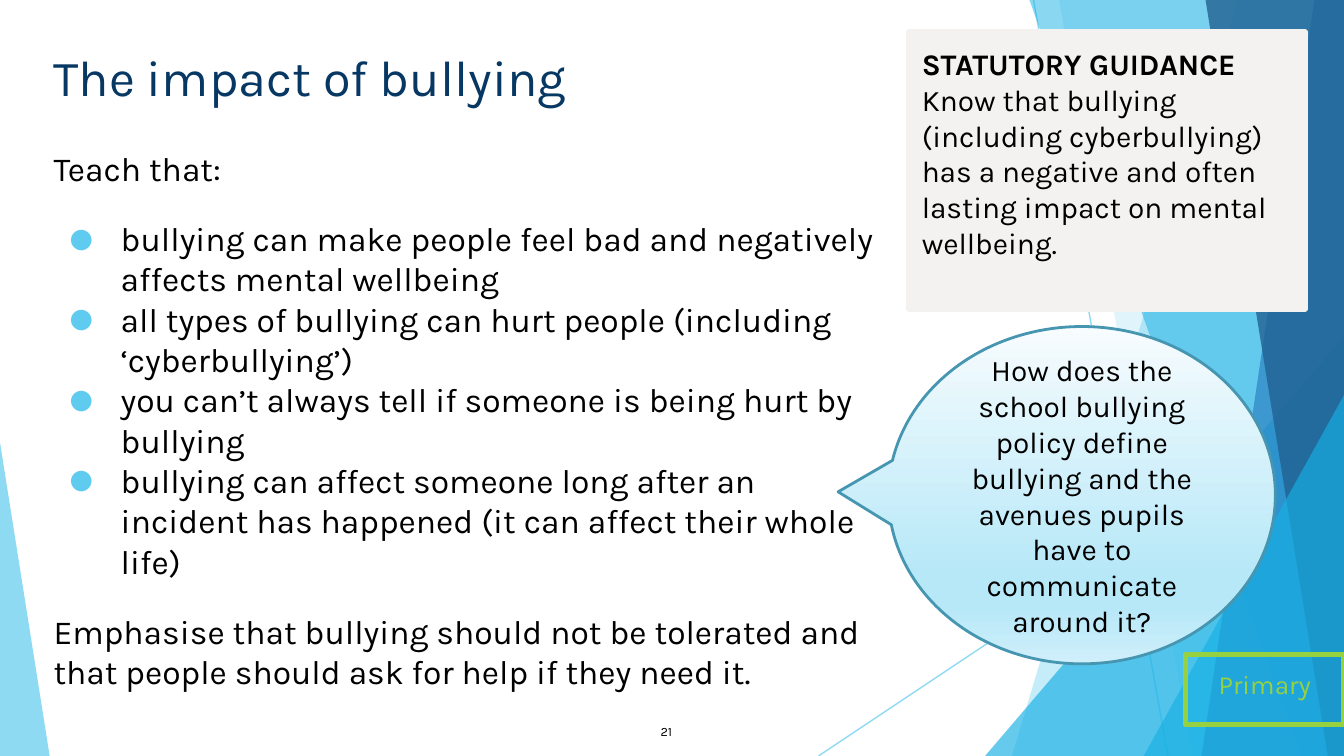
from dataclasses import dataclass

from lxml.etree import SubElement
from pptx import Presentation
from pptx.dml.color import RGBColor
from pptx.enum.shapes import MSO_CONNECTOR as Connector, MSO_SHAPE as Preset
from pptx.enum.text import MSO_ANCHOR as Anchor, PP_ALIGN as Align
from pptx.oxml.ns import qn
from pptx.util import Inches, Pt

WIDTH = 10
HEIGHT = WIDTH * 9 / 16
FONT = "Karla"
BLACK, NAVY, SKY, BLUE = "000000", "073763", "5FCBEF", "17B0E4"
GREEN, GREY = "96D141", "F3F2F1"


@dataclass
class Ray:
    start: tuple[float, float]
    end: tuple[float, float]


@dataclass
class Band:
    """Area from a slanted left edge to the right edge of the slide."""
    top_x: float
    bottom_x: float
    color: str
    alpha: int


@dataclass
class Wedge:
    """Right-angled triangle standing on the bottom of the slide."""
    left: float
    top: float
    width: float
    apex: int
    color: str
    alpha: int


@dataclass
class Line:
    text: str
    bullet: bool = False
    space_before: int = 0


DECORATION = [
    Ray((7.69, 0), (8.69, HEIGHT)),
    Ray((10, 3.02), (6.09, HEIGHT)),
    Band(9.21, 7.53, SKY, 36),
    Band(7.88, 8.87, SKY, 20),
    Wedge(7.33, 2.5, 2.67, 1, BLUE, 66),
    Band(7.66, 9.68, BLUE, 50),
    Band(9.78, 8.94, "2E83C3", 70),
    Band(8.97, 9.88, "226292", 80),
    Wedge(8.51, 2.94, 1.49, 1, BLUE, 66),
    Wedge(0, 3.29, 0.37, 0, SKY, 70),
]

BODY = [
    Line("Teach that:"),
    Line("bullying can make people feel bad and negatively affects mental wellbeing", True, 16),
    Line("all types of bullying can hurt people (including ‘cyberbullying’)", True),
    Line("you can’t always tell if someone is being hurt by bullying", True),
    Line("bullying can affect someone long after an incident has happened "
         "(it can affect their whole life)", True),
    Line("Emphasise that bullying should not be tolerated and that people "
         "should ask for help if they need it.", space_before=16),
]


def rgb(color: str) -> RGBColor:
    return RGBColor.from_string(color)


def set_fill(fill, color: str, alpha: int = 100) -> None:
    fill.solid()
    fill.fore_color.rgb = rgb(color)
    if alpha < 100:
        color_element = fill._xPr.find(".//" + qn("a:srgbClr"))
        SubElement(color_element, qn("a:alpha"), val=str(alpha * 1000))


def draw_ray(shapes, ray: Ray) -> None:
    points = [Inches(value) for value in ray.start + ray.end]
    connector = shapes.add_connector(Connector.STRAIGHT, *points)
    connector.line.width = Pt(0.75)
    set_fill(connector.line.fill, SKY, 70)
    SubElement(connector._element.spPr, qn("a:effectLst"))


def draw_band(shapes, band: Band) -> None:
    corners = [(WIDTH, 0), (WIDTH, HEIGHT), (band.bottom_x, HEIGHT)]
    builder = shapes.build_freeform(Inches(band.top_x), 0)
    builder.add_line_segments([(Inches(x), Inches(y)) for x, y in corners])
    finish(builder.convert_to_shape(), band.color, band.alpha)


def draw_wedge(shapes, wedge: Wedge) -> None:
    shape = add_preset(shapes, Preset.ISOSCELES_TRIANGLE, wedge.left, wedge.top,
                       wedge.width, HEIGHT - wedge.top)
    shape.adjustments[0] = wedge.apex
    finish(shape, wedge.color, wedge.alpha)


def finish(shape, color: str, alpha: int) -> None:
    shape.shadow.inherit = False
    set_fill(shape.fill, color, alpha)
    shape.line.fill.background()


def add_preset(shapes, preset, left: float, top: float, width: float, height: float):
    shape = shapes.add_shape(preset, Inches(left), Inches(top), Inches(width), Inches(height))
    shape.shadow.inherit = False
    return shape


def add_box(shapes, left: float, top: float, width: float, height: float):
    return shapes.add_textbox(Inches(left), Inches(top), Inches(width), Inches(height))


def set_outline(shape, color: str, width: float) -> None:
    shape.line.color.rgb = rgb(color)
    shape.line.width = Pt(width)


def set_text(shape, text: str, size: float, color: str = BLACK, align=Align.LEFT,
             anchor=Anchor.TOP, inset: float = 0.1) -> None:
    frame = shape.text_frame
    frame.text = text
    frame.word_wrap = True
    frame.vertical_anchor = anchor
    frame.margin_left = frame.margin_right = Inches(0.1)
    frame.margin_top = frame.margin_bottom = Inches(inset)
    for paragraph in frame.paragraphs:
        paragraph.alignment = align
        for run in paragraph.runs:
            format_run(run, size, color)


def format_run(run, size: float, color: str = BLACK, bold: bool = False) -> None:
    run.font.name, run.font.size, run.font.bold = FONT, Pt(size), bold
    run.font.color.rgb = rgb(color)


def add_bullet(paragraph) -> None:
    properties = paragraph._p.get_or_add_pPr()
    properties.set("marL", str(Inches(0.5)))
    properties.set("indent", str(Inches(-0.38)))
    bullet_color = SubElement(properties, qn("a:buClr"))
    SubElement(bullet_color, qn("a:srgbClr"), val=SKY)
    SubElement(properties, qn("a:buSzPct"), val="80000")
    SubElement(properties, qn("a:buFont"), typeface=FONT)
    SubElement(properties, qn("a:buChar"), char="●")


def set_gradient(shape, stops: list[tuple[int, str]]) -> None:
    shape.fill.gradient()
    shape.fill.gradient_angle = 270
    stop_list = shape._element.spPr.find(".//" + qn("a:gsLst"))
    stop_list.clear()
    for position, color in stops:
        stop = SubElement(stop_list, qn("a:gs"), pos=str(position * 1000))
        SubElement(stop, qn("a:srgbClr"), val=color)


def main() -> None:
    presentation = Presentation()
    presentation.slide_width, presentation.slide_height = Inches(WIDTH), Inches(HEIGHT)
    shapes = presentation.slides.add_slide(presentation.slide_layouts[6]).shapes

    # Background facets
    painters = {Ray: draw_ray, Band: draw_band, Wedge: draw_wedge}
    for item in DECORATION:
        painters[type(item)](shapes, item)

    # Title and teaching points
    set_text(add_box(shapes, 0.3, 0.24, 6.6, 0.63), "The impact of bullying", 27, NAVY)
    body = add_box(shapes, 0.3, 1, 6.32, 4.12)
    set_text(body, "\n".join(line.text for line in BODY), 18)
    for paragraph, line in zip(body.text_frame.paragraphs, BODY):
        paragraph.space_before = Pt(line.space_before)
        if line.bullet:
            add_bullet(paragraph)

    # Statutory guidance
    guidance = add_preset(shapes, Preset.RECTANGLE, 6.76, 0.24, 2.95, 2.06)
    set_fill(guidance.fill, GREY)
    set_outline(guidance, GREY, 3)
    set_text(guidance, "STATUTORY GUIDANCE ", 16)
    paragraph = guidance.text_frame.paragraphs[0]
    paragraph.runs[0].font.bold = True
    run = paragraph.add_run()
    run.text = ("Know that bullying (including cyberbullying) has a negative "
                "and often lasting impact on mental wellbeing.")
    format_run(run, 16)

    # Slide number and school phase
    set_text(add_box(shapes, 4.59, 5.26, 0.51, 0.37), "21", 6.8,
             align=Align.RIGHT, anchor=Anchor.MIDDLE)
    phase = add_preset(shapes, Preset.RECTANGLE, 8.82, 4.87, 1.18, 0.52)
    phase.fill.background()
    set_outline(phase, GREEN, 3)
    set_text(phase, "Primary", 14, GREEN, Align.CENTER)

    # Question callout
    callout = add_preset(shapes, Preset.OVAL_CALLOUT, 6.61, 2.43, 2.88, 2.51)
    callout.adjustments[0], callout.adjustments[1] = -0.63, -0.01
    set_gradient(callout, [(0, "F7FCFE"), (74, "B7E8F8"), (83, "B7E8F8"), (100, "CFEFFA")])
    set_outline(callout, "4696B1", 1.5)
    set_text(callout, "How does the school bullying policy define bullying and the avenues "
             "pupils have to communicate around it?", 16, align=Align.CENTER,
             anchor=Anchor.MIDDLE, inset=0.05)

    presentation.save("out.pptx")


if __name__ == "__main__":
    main()
